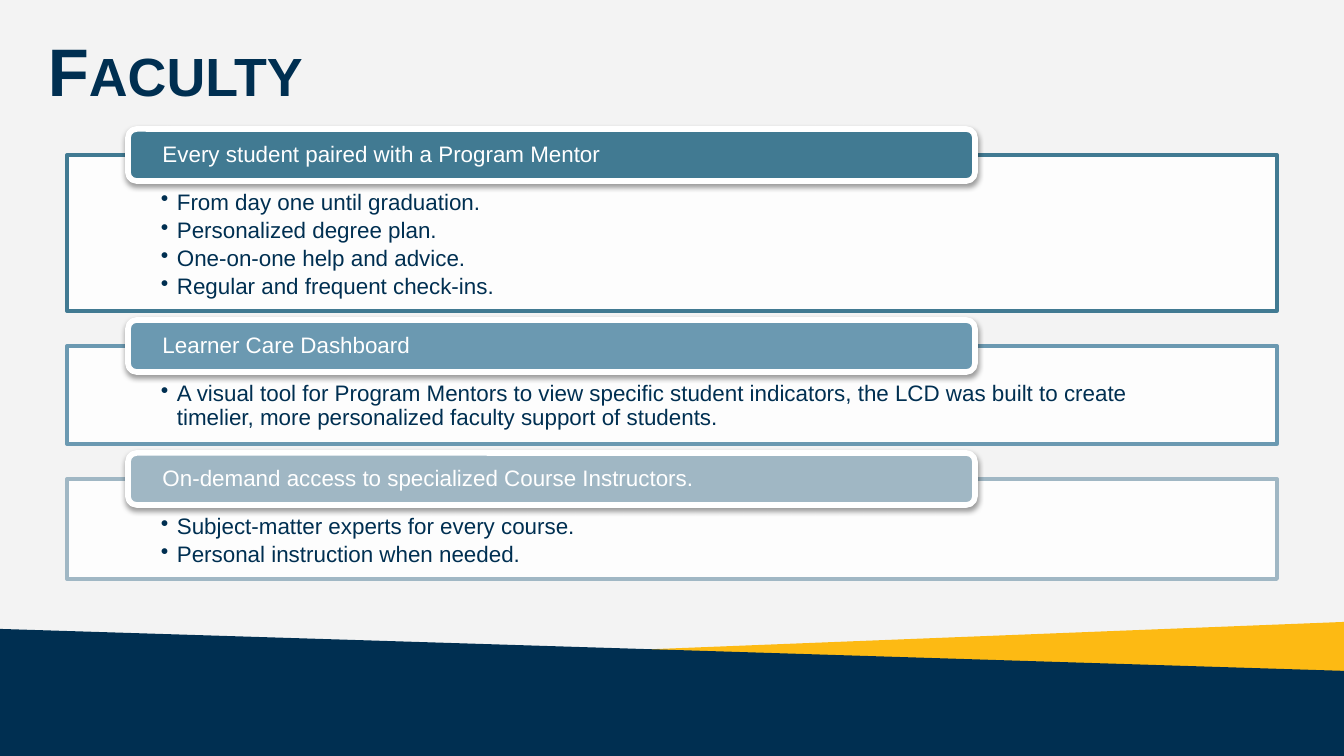
"""Build the Faculty slide: three titled panels above a two-colour footer."""
from typing import NamedTuple

from lxml import etree
from pptx import Presentation
from pptx import util as u
from pptx.dml.color import RGBColor
from pptx.enum import shapes, text
from pptx.oxml import ns

PX = 914400 / 134.4
WIDTH, HEIGHT = 1344, 756
NAVY, GOLD, WHITE, PALE = "002F51", "FDBA13", "FFFFFF", "F3F3F3"
PANEL_LEFT, PANEL_WIDTH, PANEL_TOP, PANEL_GAP = 67, 1210, 155, 35
TAB_LEFT, TAB_WIDTH, TAB_HEIGHT = 128, 847, 52
BULLET_INDENT = 16


class Section(NamedTuple):
    heading: str
    points: list[str]
    colour: str
    height: int


SECTIONS = [
    Section("Every student paired with a Program Mentor",
            ["From day one until graduation.", "Personalized degree plan.",
             "One-on-one help and advice.", "Regular and frequent check-ins."],
            "417A92", 156),
    Section("Learner Care Dashboard",
            ["A visual tool for Program Mentors to view specific student indicators, "
             "the LCD was built to create timelier, more personalized faculty support "
             "of students."],
            "6B99B1", 98),
    Section("On-demand access to specialized Course Instructors.",
            ["Subject-matter experts for every course.",
             "Personal instruction when needed."],
            "A0B7C4", 100),
]


def px(length: int) -> int:
    return round(length * PX)


def rgb(colour: str) -> RGBColor:
    return RGBColor.from_string(colour)


def add_child(parent, tag: str, **attributes: str):
    return etree.SubElement(parent, ns.qn(tag), attributes)


def paint(shape, fill: str, line: str = "", points: int = 0) -> None:
    shape.shadow.inherit = False
    shape.fill.solid()
    shape.fill.fore_color.rgb = rgb(fill)
    if line:
        shape.line.color.rgb = rgb(line)
        shape.line.width = u.Pt(points)
    else:
        shape.line.fill.background()


def add_box(page, kind, left: int, top: int, width: int, height: int):
    return page.shapes.add_shape(kind, px(left), px(top), px(width), px(height))


def set_frame(box, anchor, side: int, top: int = 0, bottom: int = 0):
    frame = box.text_frame
    frame.word_wrap = True
    frame.vertical_anchor = anchor
    frame.margin_left = frame.margin_right = px(side)
    frame.margin_top, frame.margin_bottom = px(top), px(bottom)
    return frame


def style(para, size: int, colour: str, bold: bool = False) -> None:
    para.alignment = text.PP_ALIGN.LEFT
    para.font.name = "Arial"
    para.font.size = u.Pt(size)
    para.font.bold = bold
    para.font.color.rgb = rgb(colour)


def add_footer_band(page, points: list[tuple[int, int]], colour: str) -> None:
    builder = page.shapes.build_freeform(*points[0], scale=PX)
    builder.add_line_segments(points[1:], close=True)
    paint(builder.convert_to_shape(), colour)


def add_title(page, title: str) -> None:
    box = page.shapes.add_textbox(px(35), px(15), px(1275), px(109))
    para = set_frame(box, text.MSO_ANCHOR.MIDDLE, 13).paragraphs[0]
    para.text = title
    style(para, 36, NAVY, bold=True)
    para._p.pPr.find(ns.qn("a:defRPr")).set("cap", "small")


def add_panel(page, section: Section, top: int) -> None:
    panel = add_box(page, shapes.MSO_SHAPE.RECTANGLE,
                    PANEL_LEFT, top, PANEL_WIDTH, section.height)
    paint(panel, WHITE, section.colour, 2)
    fill = panel._element.spPr.find(ns.qn("a:solidFill"))
    add_child(fill[0], "a:alpha", val="90000")
    frame = set_frame(panel, text.MSO_ANCHOR.TOP, 94, 36, 12)
    for index, point in enumerate(section.points):
        para = frame.add_paragraph() if index else frame.paragraphs[0]
        para.text = point
        properties = para._p.get_or_add_pPr()
        properties.set("marL", str(px(BULLET_INDENT)))
        properties.set("indent", str(-px(BULLET_INDENT)))
        add_child(properties, "a:buChar", char="•")
        para.line_spacing = 0.9
        para.space_after = u.Pt(2.1)
        style(para, 12, NAVY)


def add_tab(page, section: Section, panel_top: int) -> None:
    tab = add_box(page, shapes.MSO_SHAPE.ROUNDED_RECTANGLE, TAB_LEFT,
                  panel_top - TAB_HEIGHT // 2, TAB_WIDTH, TAB_HEIGHT)
    paint(tab, section.colour, WHITE, 3)
    effects = tab._element.spPr.find(ns.qn("a:effectLst"))
    shadow = add_child(effects, "a:outerShdw", blurRad=str(u.Pt(3.1)),
                       dist=str(u.Pt(1.6)), dir="5400000", rotWithShape="0")
    add_child(add_child(shadow, "a:srgbClr", val="000000"), "a:alpha", val="38000")
    para = set_frame(tab, text.MSO_ANCHOR.MIDDLE, 32).paragraphs[0]
    para.text = section.heading
    para.line_spacing = 0.9
    style(para, 12, WHITE)


def main() -> None:
    deck = Presentation()
    deck.slide_width, deck.slide_height = px(WIDTH), px(HEIGHT)
    page = deck.slides.add_slide(deck.slide_layouts[6])
    page.background.fill.solid()
    page.background.fill.fore_color.rgb = rgb(PALE)
    add_footer_band(page, [(WIDTH, 622), (0, 675), (0, 742), (WIDTH, 742)], GOLD)
    add_footer_band(page, [(0, 629), (WIDTH, 671), (WIDTH, HEIGHT), (0, HEIGHT)], NAVY)
    add_title(page, "Faculty")
    top = PANEL_TOP
    for section in SECTIONS:
        add_panel(page, section, top)
        add_tab(page, section, top)
        top += section.height + PANEL_GAP
    deck.save("out.pptx")


if __name__ == "__main__":
    main()
